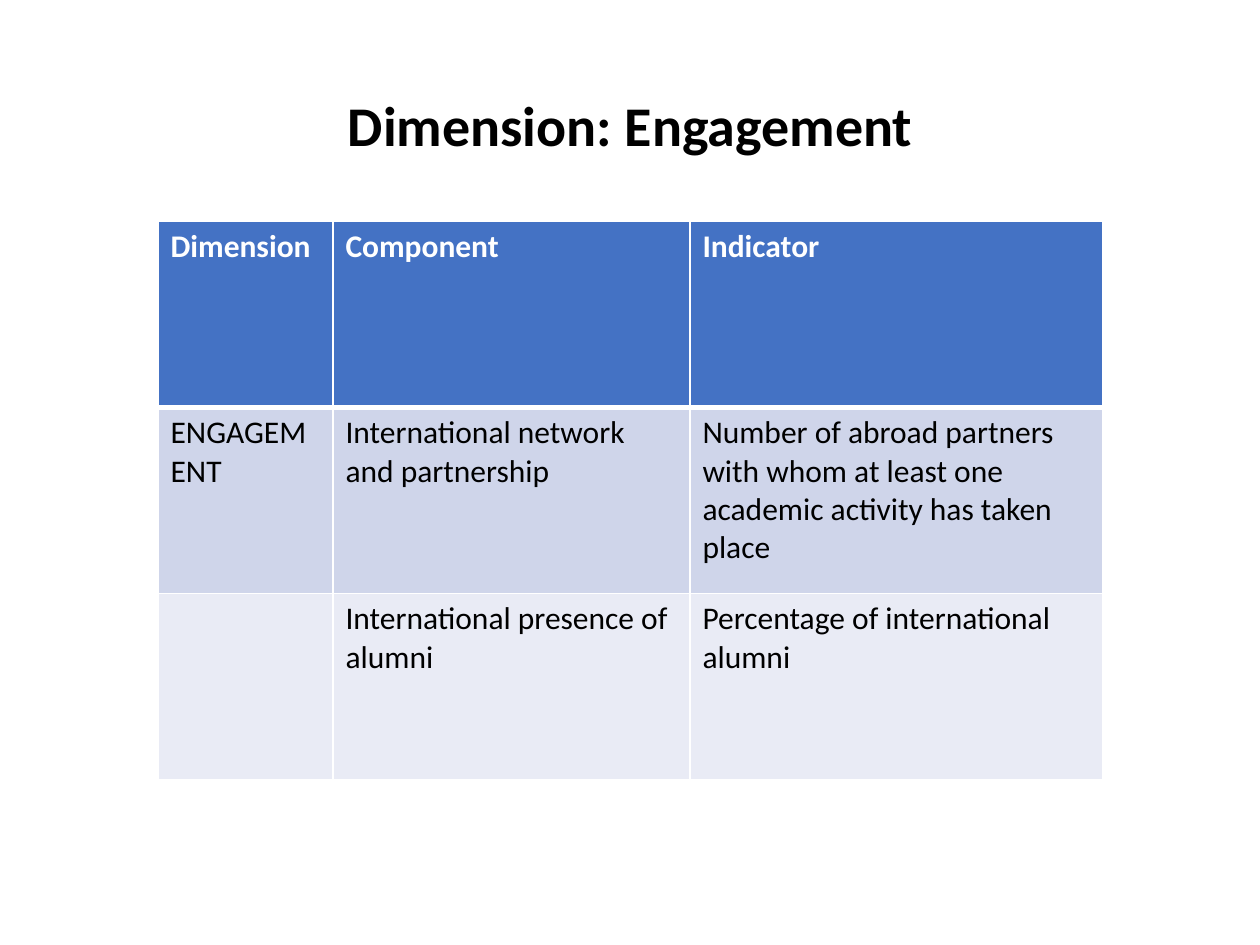
from dataclasses import dataclass

from lxml import etree
from pptx import Presentation
from pptx.dml.color import RGBColor
from pptx.enum.text import MSO_ANCHOR, PP_ALIGN
from pptx.oxml.ns import qn
from pptx.util import Pt

CENTER = PP_ALIGN.CENTER
BOTTOM = MSO_ANCHOR.BOTTOM
SCALE = 914400 / 126


@dataclass(frozen=True)
class Theme:
    font: str = "Calibri"
    title: int = 32
    body: int = 18
    thin: int = 1
    thick: int = 3
    ink: str = "000000"
    white: str = "FFFFFF"
    head: str = "4472C4"
    bands: tuple = ("CFD5EA", "E9EBF5")


THEME = Theme()
COLS = (175, 357, 413)
ROWS = (
    ("Dimension", "Component", "Indicator"),
    ("ENGAGEMENT", "International network and partnership",
     "Number of abroad partners with whom at least one academic activity has taken place"),
    ("", "International presence of alumni", "Percentage of international alumni"),
)


def px(num):
    return round(num * SCALE)


def add_run(para, text, size, color, bold):
    run = para.add_run()
    run.text = text
    font = run.font
    font.name = THEME.font
    font.size = Pt(size)
    font.bold = bold
    font.color.rgb = RGBColor.from_string(color)


def add_title(slide, box, text):
    frame = slide.shapes.add_textbox(*map(px, box)).text_frame
    frame.word_wrap = True
    frame.vertical_anchor = BOTTOM
    para = frame.paragraphs[0]
    para.alignment = CENTER
    para.line_spacing = 0.9
    add_run(para, text, THEME.title, THEME.ink, True)


def add_edges(cell, widths):
    """Draw white borders; the schema wants them ahead of the cell fill."""
    props = cell._tc.get_or_add_tcPr()
    for spot, (side, width) in enumerate(widths.items()):
        line = etree.Element(qn(f"a:ln{side}"), w=str(Pt(width)))
        fill = etree.SubElement(line, qn("a:solidFill"))
        etree.SubElement(fill, qn("a:srgbClr"), val=THEME.white)
        props.insert(spot, line)


def add_grid(slide, box, cols, rows):
    frame = slide.shapes.add_table(len(rows), len(cols), *map(px, box))
    table = frame.table
    for col, width in zip(table.columns, cols):
        col.width = px(width)
    for i, texts in enumerate(rows):
        table.rows[i].height = px(box[3] / len(rows))
        head = i == 0
        fill = THEME.head if head else THEME.bands[(i - 1) % 2]
        edges = {
            "L": THEME.thin,
            "R": THEME.thin,
            "T": THEME.thick if i == 1 else THEME.thin,
            "B": THEME.thick if head else THEME.thin,
        }
        for j, text in enumerate(texts):
            cell = table.cell(i, j)
            cell.fill.solid()
            cell.fill.fore_color.rgb = RGBColor.from_string(fill)
            add_edges(cell, edges)
            if text:
                color = THEME.white if head else THEME.ink
                add_run(cell.text_frame.paragraphs[0], text, THEME.body, color, head)


def main():
    deck = Presentation()
    deck.slide_width, deck.slide_height = px(1260), px(945)
    slide = deck.slides.add_slide(deck.slide_layouts[6])
    add_title(slide, (158, 106, 945, 59), "Dimension: Engagement")
    add_grid(slide, (158, 221, sum(COLS), 559), COLS, ROWS)
    deck.save("out.pptx")


if __name__ == "__main__":
    main()
